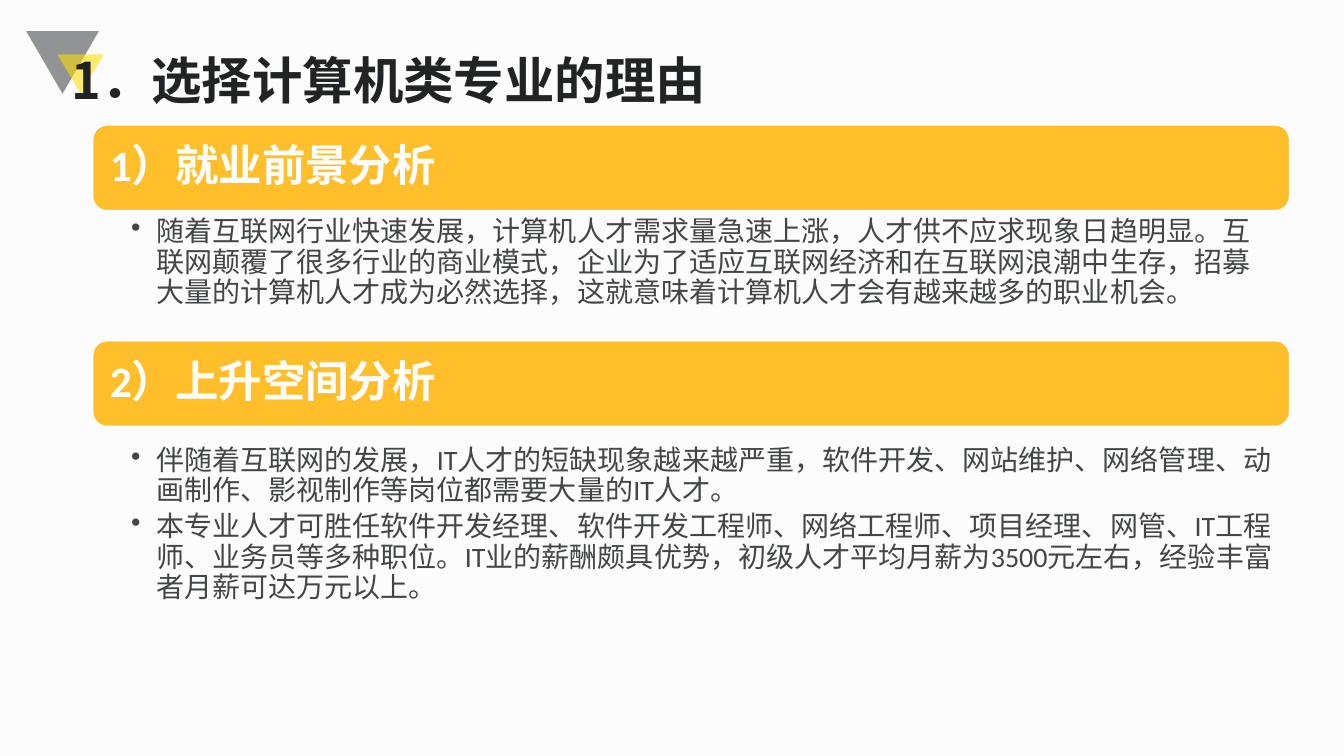
from dataclasses import dataclass

import lxml.etree
import pptx
import pptx.dml.color
import pptx.enum.shapes
import pptx.enum.text
import pptx.oxml.ns
import pptx.util

Inches = pptx.util.Inches
Pt = pptx.util.Pt
qn = pptx.oxml.ns.qn
Shapes = pptx.enum.shapes.MSO_SHAPE
Anchor = pptx.enum.text.MSO_ANCHOR

COLORS = {"wash": "FBFBFB", "gray": "434547", "yellow": "FFDE01",
          "title": "222324", "banner": "FFBF2B", "white": "FFFFFF"}
CHINESE_FONT = "Noto Sans CJK SC"
BODY_FONT = "Calibri"
LEFT, WIDTH = 0.92, 11.87
BANNER_HEIGHT, BANNER_INSET = 0.85, 0.04


@dataclass
class Box:
    left: float
    top: float
    width: float
    height: float

    def lengths(self) -> list:
        return [Inches(n) for n in (self.left, self.top, self.width, self.height)]


@dataclass
class TextStyle:
    size: float
    color: str
    font: str = BODY_FONT
    bold: bool = False
    space_after: float = 0
    bullet: bool = False


@dataclass
class Section:
    heading: str
    banner_top: float
    body_top: float
    body_height: float
    points: list[str]


def rgb(name: str) -> pptx.dml.color.RGBColor:
    return pptx.dml.color.RGBColor.from_string(COLORS[name])


def add_filled(slide, kind, box: Box, color: str, opacity: int = 100):
    shape = slide.shapes.add_shape(kind, *box.lengths())
    shape.shadow.inherit = False
    shape.fill.solid()
    shape.fill.fore_color.rgb = rgb(color)
    shape.line.fill.background()
    if opacity < 100:
        color_element = shape.fill._xPr.find(".//" + qn("a:srgbClr"))
        lxml.etree.SubElement(color_element, qn("a:alpha"), val=str(opacity * 1000))
    return shape


def add_text(slide, box: Box, texts: list[str], style: TextStyle,
             anchor, margins: tuple) -> None:
    frame = slide.shapes.add_textbox(*box.lengths()).text_frame
    frame.word_wrap = True
    frame.vertical_anchor = anchor
    (frame.margin_left, frame.margin_top,
     frame.margin_right, frame.margin_bottom) = [Inches(m) for m in margins]
    for index, text in enumerate(texts):
        paragraph = frame.paragraphs[0] if index == 0 else frame.add_paragraph()
        paragraph.line_spacing = 0.9
        paragraph.space_after = Pt(style.space_after)
        if style.bullet:
            paragraph.level = 1
            properties = paragraph._p.get_or_add_pPr()
            properties.set("marL", str(Inches(0.25)))
            properties.set("indent", str(-Inches(0.25)))
            lxml.etree.SubElement(properties, qn("a:buChar"), char="•")
        run = paragraph.add_run()
        run.text = text
        run.font.size = Pt(style.size)
        run.font.bold = style.bold
        run.font.color.rgb = rgb(style.color)
        run.font.name = style.font
        lxml.etree.SubElement(run._r.get_or_add_rPr(), qn("a:ea"), typeface=CHINESE_FONT)


def add_section(slide, section: Section) -> None:
    banner = Box(LEFT, section.banner_top, WIDTH, BANNER_HEIGHT)
    shape = add_filled(slide, Shapes.ROUNDED_RECTANGLE, banner, "banner")
    shape.line.color.rgb = rgb("white")
    shape.line.width = Pt(1)
    heading = Box(LEFT + BANNER_INSET, section.banner_top + BANNER_INSET,
                  WIDTH - 2 * BANNER_INSET, BANNER_HEIGHT - 2 * BANNER_INSET)
    add_text(slide, heading, [section.heading], HEADING_STYLE, Anchor.MIDDLE, (0.13,) * 4)
    body = Box(LEFT, section.body_top, WIDTH, section.body_height)
    add_text(slide, body, section.points, BODY_STYLE, Anchor.TOP, (0.38, 0.03, 0.16, 0.03))


TITLE_STYLE = TextStyle(36, "title", CHINESE_FONT, bold=True)
HEADING_STYLE = TextStyle(31, "white", bold=True, space_after=11)
BODY_STYLE = TextStyle(20, "gray", space_after=4, bullet=True)

SECTIONS = [
    Section("1）就业前景分析", 1.24, 2.13, 1.07, [
        "随着互联网行业快速发展，计算机人才需求量急速上涨，人才供不应求现象日趋明显。"
        "互联网颠覆了很多行业的商业模式，企业为了适应互联网经济和在互联网浪潮中生存，"
        "招募大量的计算机人才成为必然选择，这就意味着计算机人才会有越来越多的职业机会。"]),
    Section("2）上升空间分析", 3.38, 4.4, 2, [
        "伴随着互联网的发展，IT人才的短缺现象越来越严重，软件开发、网站维护、网络管理、"
        "动画制作、影视制作等岗位都需要大量的IT人才。",
        "本专业人才可胜任软件开发经理、软件开发工程师、网络工程师、项目经理、网管、"
        "IT工程师、业务员等多种职位。IT业的薪酬颇具优势，初级人才平均月薪为3500元左右，"
        "经验丰富者月薪可达万元以上。"]),
]


def main() -> None:
    presentation = pptx.Presentation()
    presentation.slide_width = Inches(13.33)
    presentation.slide_height = Inches(7.5)
    slide = presentation.slides.add_slide(presentation.slide_layouts[6])

    # Background wash and corner triangles
    add_filled(slide, Shapes.RECTANGLE, Box(0, 0, 13.33, 7.5), "wash", 60)
    for box, color in ((Box(0.26, 0.31, 0.72, 0.62), "gray"),
                       (Box(0.57, 0.54, 0.46, 0.39), "yellow")):
        add_filled(slide, Shapes.ISOSCELES_TRIANGLE, box, color, 57).rotation = 180

    # Title
    add_text(slide, Box(0.61, 0.26, 11.9, 0.82), ["1．选择计算机类专业的理由"],
             TITLE_STYLE, Anchor.TOP, (0.1, 0.3, 0.1, 0))

    # Banners with their bullet lists
    for section in SECTIONS:
        add_section(slide, section)

    presentation.save("out.pptx")


if __name__ == "__main__":
    main()
